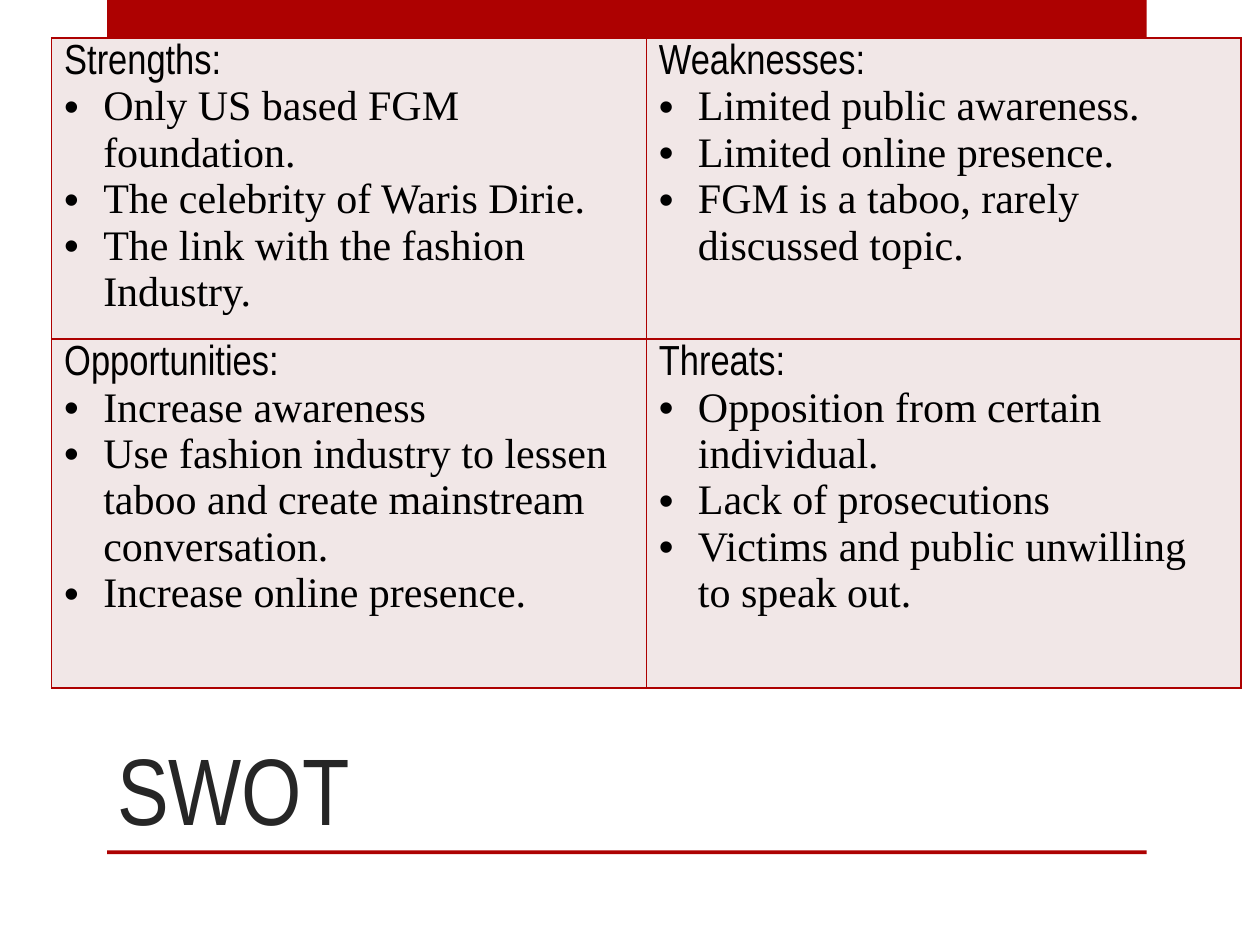
from dataclasses import dataclass

from lxml.etree import SubElement
from pptx import Presentation
from pptx.dml.color import RGBColor
from pptx.enum.shapes import MSO_SHAPE
from pptx.enum.text import MSO_ANCHOR, PP_ALIGN
from pptx.oxml.ns import qn
from pptx.util import Inches, Pt


@dataclass(frozen=True)
class Theme:
    """Colours, fonts and type sizes of the slide."""

    accent: str = "AD0101"
    cell: str = "F1E7E7"
    title: str = "262626"
    text: str = "000000"
    heading_font: str = "Arial Narrow"
    body_font: str = "Times New Roman"
    title_size: int = 54
    body_size: int = 24


QUADRANTS = [
    [
        ("Strengths:", ["Only US based FGM foundation.",
                        "The celebrity of Waris Dirie.",
                        "The link with the fashion Industry."]),
        ("Weaknesses:", ["Limited public awareness.",
                         "Limited online presence.",
                         "FGM is a taboo, rarely discussed topic."]),
    ],
    [
        ("Opportunities:", ["Increase awareness",
                            "Use fashion industry to lessen taboo and create "
                            "mainstream conversation.",
                            "Increase online presence."]),
        ("Threats:", ["Opposition from certain individual.",
                      "Lack of prosecutions",
                      "Victims and public unwilling to speak out."]),
    ],
]


class SlideBuilder:
    """Holds the theme and the current slide."""

    def __init__(self, slide, theme):
        self.slide = slide
        self.theme = theme

    def style(self, paragraph, font_name, size, color):
        """Set the font of a whole paragraph."""
        font = paragraph.font
        font.name = font_name
        font.size = Pt(size)
        font.color.rgb = RGBColor.from_string(color)

    def bar(self, left, top, width, height):
        """Add a solid accent bar."""
        shape = self.slide.shapes.add_shape(
            MSO_SHAPE.RECTANGLE, Inches(left), Inches(top), Inches(width), Inches(height))
        shape.shadow.inherit = False
        shape.fill.solid()
        shape.fill.fore_color.rgb = RGBColor.from_string(self.theme.accent)
        shape.line.fill.background()

    def title(self, text, left, top, width, height):
        """Fill and place the title placeholder."""
        shape = self.slide.shapes.title
        shape.left, shape.top = Inches(left), Inches(top)
        shape.width, shape.height = Inches(width), Inches(height)
        frame = shape.text_frame
        frame.text = text
        frame.vertical_anchor = MSO_ANCHOR.BOTTOM
        paragraph = frame.paragraphs[0]
        paragraph.alignment = PP_ALIGN.LEFT
        self.style(paragraph, self.theme.heading_font, self.theme.title_size, self.theme.title)

    def bullet(self, paragraph, indent=0.31):
        """Give a paragraph a hanging bullet."""
        properties = paragraph._p.get_or_add_pPr()
        properties.set("marL", str(Inches(indent)))
        properties.set("indent", str(-Inches(indent)))
        SubElement(properties, qn("a:buFont"), typeface="Arial")
        SubElement(properties, qn("a:buChar"), char="•")

    def borders(self, cell):
        """Draw a thin accent border on all sides of a cell."""
        properties = cell._tc.get_or_add_tcPr()
        for index, side in enumerate(("lnL", "lnR", "lnT", "lnB")):
            line = SubElement(properties, qn(f"a:{side}"), w=str(Pt(1)))
            fill = SubElement(line, qn("a:solidFill"))
            SubElement(fill, qn("a:srgbClr"), val=self.theme.accent)
            properties.insert(index, line)

    def quadrant(self, cell, heading, points):
        """Fill one cell with a heading and its bullet points."""
        theme = self.theme
        cell.fill.solid()
        cell.fill.fore_color.rgb = RGBColor.from_string(theme.cell)
        self.borders(cell)
        frame = cell.text_frame
        frame.text = "\n".join([heading, *points])
        first, *rest = frame.paragraphs
        self.style(first, theme.heading_font, theme.body_size, theme.text)
        for paragraph in rest:
            self.style(paragraph, theme.body_font, theme.body_size, theme.text)
            self.bullet(paragraph)

    def matrix(self, quadrants, left, top, column_width, row_heights):
        """Add the table of quadrants."""
        columns = len(quadrants[0])
        table = self.slide.shapes.add_table(
            len(quadrants), columns, Inches(left), Inches(top),
            Inches(column_width * columns), Inches(sum(row_heights))).table
        table.first_row = table.horz_banding = False
        for column in table.columns:
            column.width = Inches(column_width)
        for row, height, contents in zip(table.rows, row_heights, quadrants):
            row.height = Inches(height)
            for cell, (heading, points) in zip(row.cells, contents):
                self.quadrant(cell, heading, points)


def main():
    """Build and save the SWOT slide."""
    presentation = Presentation()
    presentation.slide_width, presentation.slide_height = Inches(10), Inches(7.5)
    slide = presentation.slides.add_slide(presentation.slide_layouts[5])
    builder = SlideBuilder(slide, Theme())
    builder.bar(0.85, 0, 8.25, 0.42)
    builder.bar(0.85, 6.75, 8.25, 0.03)
    builder.title("SWOT", 0.83, 5.7, 2.3, 1.05)
    builder.matrix(QUADRANTS, 0.41, 0.3, 4.72, [2.39, 2.77])
    presentation.save("out.pptx")


if __name__ == "__main__":
    main()
